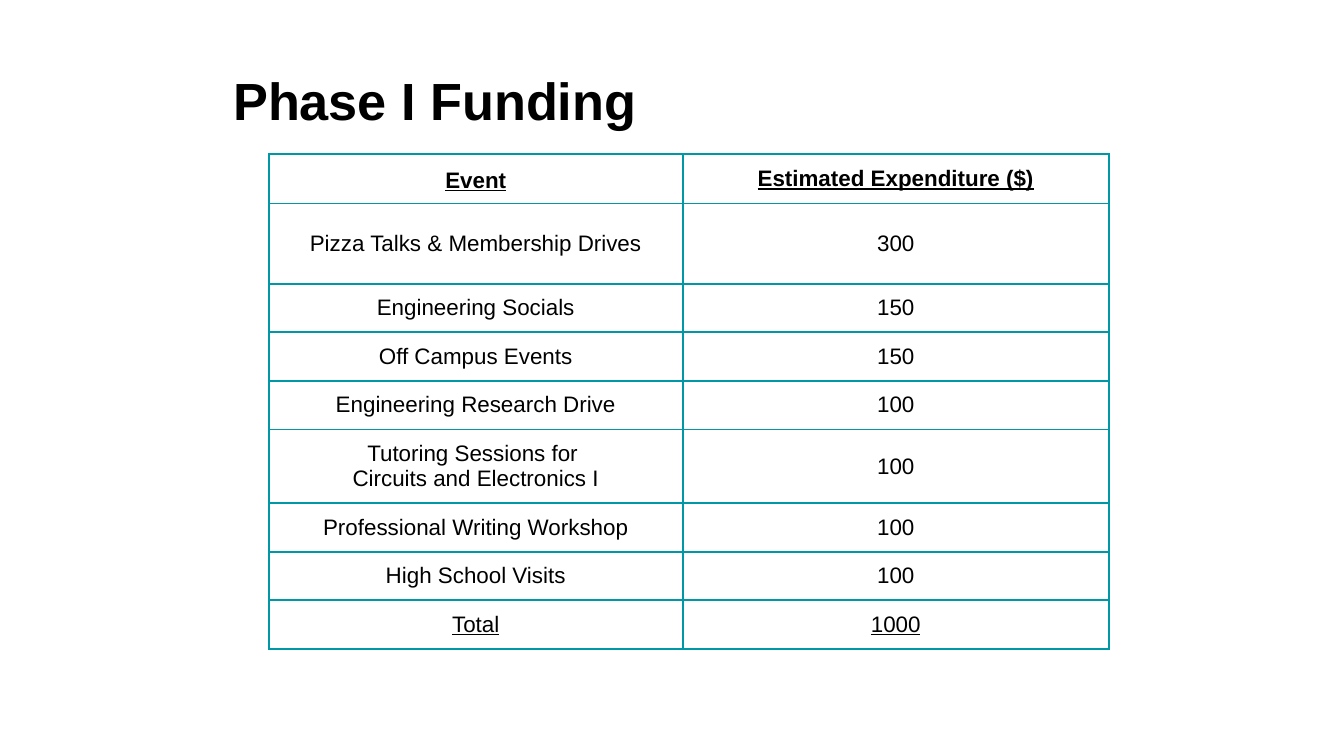
from dataclasses import dataclass

from lxml.etree import SubElement
from pptx import Presentation
from pptx.dml.color import RGBColor
from pptx.enum.text import MSO_ANCHOR as Anchor, PP_ALIGN as Align
from pptx.oxml.ns import qn
from pptx.slide import Slide
from pptx.table import Table, _Cell as Cell
from pptx.text.text import TextFrame
from pptx.util import Inches, Pt

SLIDE_W = Inches(10)
SLIDE_H = SLIDE_W * 9 // 16
INK, TEAL = "000000", "0097A7"

COLUMN_WIDTHS = (Inches(3.08), Inches(3.17))
ROW_HEIGHT = 26
SIDES = ("left", "right", "top", "bottom")

TITLE_FORMAT = {"name": "Arial", "size": Pt(28), "bold": True}
BODY_FORMAT = {"name": "Arial", "size": Pt(12), "bold": False, "underline": False}
FORMATS = {
    "body": BODY_FORMAT,
    "header": BODY_FORMAT | {"bold": True, "underline": True},
    "total": BODY_FORMAT | {"underline": True},
}


@dataclass(frozen=True)
class BudgetRow:
    """One line of the budget; its height is in points."""
    event: str
    amount: str
    height: float = ROW_HEIGHT
    style: str = "body"
    event_spacing: float | None = None


BUDGET = (
    BudgetRow("Event", "Estimated Expenditure ($)", style="header", event_spacing=1.15),
    BudgetRow("Pizza Talks & Membership Drives", "300", height=43),
    BudgetRow("Engineering Socials", "150"),
    BudgetRow("Off Campus Events", "150"),
    BudgetRow("Engineering Research Drive", "100"),
    BudgetRow("Tutoring Sessions for \nCircuits and Electronics I", "100", height=39.6),
    BudgetRow("Professional Writing Workshop", "100"),
    BudgetRow("High School Visits", "100"),
    BudgetRow("Total", "1000", style="total"),
)


def colour(value: str) -> RGBColor:
    return RGBColor.from_string(value)


def write(frame: TextFrame, text: str, font_format: dict,
          spacing: float | None = None) -> None:
    frame.text = text
    for paragraph in frame.paragraphs:
        paragraph.alignment = Align.CENTER
        paragraph.line_spacing = spacing
        for run in paragraph.runs:
            for attribute, value in font_format.items():
                setattr(run.font, attribute, value)
            run.font.color.rgb = colour(INK)


def set_margins(holder: TextFrame | Cell, margin: int) -> None:
    for side in SIDES:
        setattr(holder, f"margin_{side}", margin)


def add_borders(cell: Cell, line_colour: str, width: int) -> None:
    properties = cell._tc.get_or_add_tcPr()
    for side in SIDES:
        line = SubElement(properties, qn(f"a:ln{side[0].upper()}"), w=str(width))
        fill = SubElement(line, qn("a:solidFill"))
        SubElement(fill, qn("a:srgbClr"), val=line_colour)


def fill_cell(cell: Cell, text: str, font_format: dict,
              spacing: float | None = None) -> None:
    add_borders(cell, TEAL, Pt(1))
    cell.fill.background()
    cell.vertical_anchor = Anchor.MIDDLE
    set_margins(cell, Pt(5))
    write(cell.text_frame, text, font_format, spacing)


def add_title(slide: Slide, text: str) -> None:
    box = slide.shapes.add_textbox(
        Inches(0.23), Inches(0.41), Inches(6.01), Inches(0.63))
    box.text_frame.word_wrap = True
    set_margins(box.text_frame, Inches(0.1))
    write(box.text_frame, text, TITLE_FORMAT)


def add_budget(slide: Slide, rows: tuple[BudgetRow, ...]) -> Table:
    budget = slide.shapes.add_table(
        len(rows), len(COLUMN_WIDTHS), Inches(2), Pt(82.5),
        sum(COLUMN_WIDTHS), Pt(sum(row.height for row in rows))).table
    budget.horz_banding = False
    for column, width in zip(budget.columns, COLUMN_WIDTHS):
        column.width = width
    for index, row in enumerate(rows):
        budget.rows[index].height = Pt(row.height)
        font_format = FORMATS[row.style]
        fill_cell(budget.cell(index, 0), row.event, font_format, row.event_spacing)
        fill_cell(budget.cell(index, 1), row.amount, font_format)
    return budget


def main() -> None:
    deck = Presentation()
    deck.slide_width, deck.slide_height = SLIDE_W, SLIDE_H
    slide = deck.slides.add_slide(deck.slide_layouts[6])
    add_title(slide, "Phase I Funding")
    add_budget(slide, BUDGET)
    deck.save("out.pptx")


if __name__ == "__main__":
    main()
